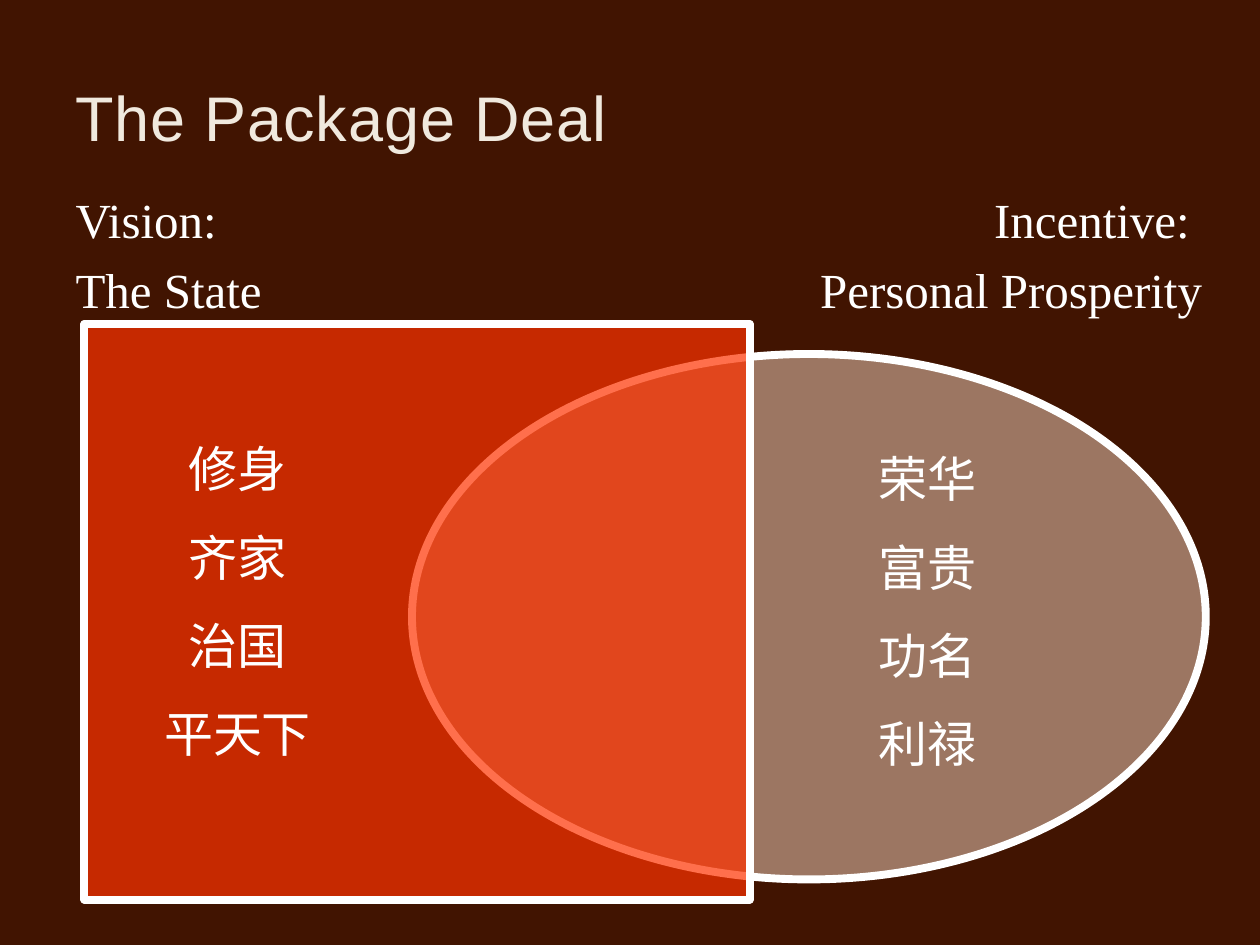
from dataclasses import dataclass

from lxml.etree import SubElement
from pptx import Presentation
from pptx.dml.color import RGBColor
from pptx.enum.shapes import MSO_SHAPE
from pptx.enum.text import MSO_ANCHOR, MSO_AUTO_SIZE, PP_ALIGN
from pptx.oxml.ns import qn
from pptx.util import Inches, Pt

BACKGROUND = RGBColor(0x41, 0x14, 0x01)
CREAM = RGBColor(0xF0, 0xE9, 0xDE)
WHITE = RGBColor(0xFF, 0xFF, 0xFF)
TAN = RGBColor(0xC4, 0xA0, 0x8C)
RED = RGBColor(0xFF, 0x33, 0x00)

TWO_CONTENT_LAYOUT = 3
CHINESE_FONT = "Noto Sans CJK SC"


@dataclass
class Box:
    left: float
    top: float
    width: float
    height: float

    def lengths(self) -> list:
        return [Inches(v) for v in (self.left, self.top, self.width, self.height)]


@dataclass
class Heading:
    placeholder: int
    box: Box
    alignment: PP_ALIGN
    lines: list[str]


@dataclass
class Region:
    geometry: MSO_SHAPE
    box: Box
    color: RGBColor


@dataclass
class Ideals:
    box: Box
    lines: list[str]


HEADINGS = [
    Heading(1, Box(0.5, 1.39, 4.42, 5.31), PP_ALIGN.LEFT, ["Vision:", "The State"]),
    Heading(2, Box(5.08, 1.39, 4.56, 5.31), PP_ALIGN.RIGHT,
            ["Incentive: ", "Personal Prosperity"]),
]
REGIONS = [
    Region(MSO_SHAPE.OVAL, Box(3.27, 2.81, 6.3, 4.17), TAN),
    Region(MSO_SHAPE.RECTANGLE, Box(0.67, 2.57, 5.28, 4.57), RED),
]
IDEALS = [
    Ideals(Box(0.98, 3.2, 1.81, 3.4), ["修身", "齐家", "治国", "平天下"]),
    Ideals(Box(6.1, 3.28, 2.52, 4.34), ["荣华", "富贵", "功名", "利禄"]),
]


def place(shape, box: Box) -> None:
    shape.left, shape.top, shape.width, shape.height = box.lengths()


def add_run(paragraph, text: str, font_name: str, size: float, color: RGBColor):
    run = paragraph.add_run()
    run.text = text
    run.font.name = font_name
    run.font.size = Pt(size)
    run.font.color.rgb = color
    return run


def add_paragraph(frame, index: int):
    return frame.paragraphs[0] if index == 0 else frame.add_paragraph()


def fill_title(slide) -> None:
    title = slide.shapes.title
    place(title, Box(0.5, 0.3, 8.5, 1.25))
    frame = title.text_frame
    frame.auto_size = MSO_AUTO_SIZE.NONE
    frame.vertical_anchor = MSO_ANCHOR.MIDDLE
    paragraph = frame.paragraphs[0]
    paragraph.alignment = PP_ALIGN.LEFT
    run = add_run(paragraph, "The Package Deal", "Arial", 36, CREAM)
    run.font._element.set("spc", "50")


def fill_heading(slide, heading: Heading) -> None:
    shape = slide.placeholders[heading.placeholder]
    place(shape, heading.box)
    frame = shape.text_frame
    frame.auto_size = MSO_AUTO_SIZE.NONE
    frame.margin_top = Inches(0.11)
    for index, line in enumerate(heading.lines):
        paragraph = add_paragraph(frame, index)
        properties = paragraph._p.get_or_add_pPr()
        properties.set("marL", str(Inches(0.38)))
        properties.set("indent", str(-Inches(0.38)))
        SubElement(properties, qn("a:buNone"))
        paragraph.alignment = heading.alignment
        paragraph.space_before = Pt(6.5 if index else 0)
        add_run(paragraph, line, "Times New Roman", 28, WHITE)


def draw_region(slide, region: Region) -> None:
    shape = slide.shapes.add_shape(region.geometry, *region.box.lengths())
    shape.shadow.inherit = False
    shape.fill.solid()
    shape.fill.fore_color.rgb = region.color
    color = shape._element.spPr.find(qn("a:solidFill"))[0]
    SubElement(color, qn("a:alpha"), val="70000")
    shape.line.color.rgb = WHITE
    shape.line.width = Pt(4.5)


def write_ideals(slide, ideals: Ideals) -> None:
    frame = slide.shapes.add_textbox(*ideals.box.lengths()).text_frame
    frame.word_wrap = True
    frame.auto_size = MSO_AUTO_SIZE.SHAPE_TO_FIT_TEXT
    for index, line in enumerate(ideals.lines):
        paragraph = add_paragraph(frame, index)
        paragraph.alignment = PP_ALIGN.CENTER
        paragraph.line_spacing = 1.5
        run = add_run(paragraph, line, CHINESE_FONT, 28, WHITE)
        SubElement(run.font._element, qn("a:ea"), typeface=CHINESE_FONT)


def main() -> None:
    presentation = Presentation()
    presentation.slide_width = Inches(10)
    presentation.slide_height = Inches(7.5)
    slide = presentation.slides.add_slide(presentation.slide_layouts[TWO_CONTENT_LAYOUT])
    slide.background.fill.solid()
    slide.background.fill.fore_color.rgb = BACKGROUND
    fill_title(slide)
    for heading in HEADINGS:
        fill_heading(slide, heading)
    for region in REGIONS:
        draw_region(slide, region)
    for ideals in IDEALS:
        write_ideals(slide, ideals)
    presentation.save("out.pptx")


if __name__ == "__main__":
    main()
